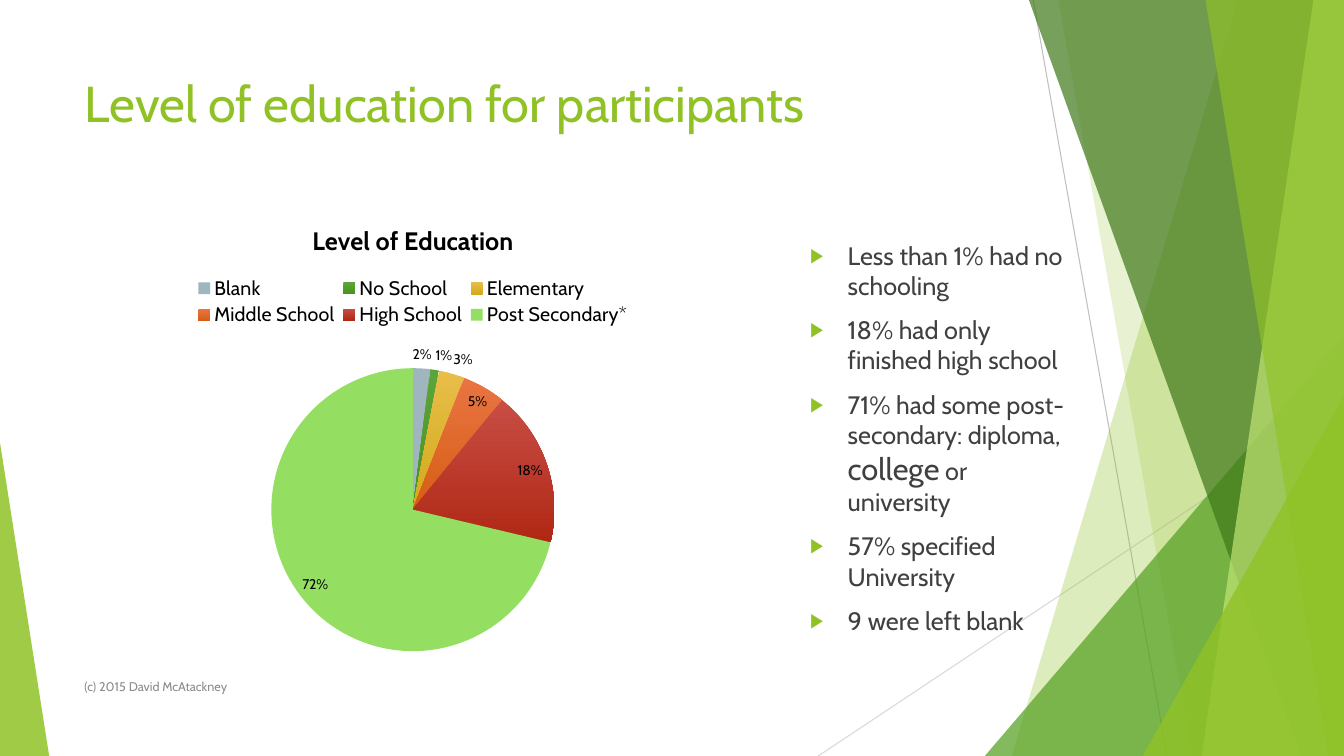
from lxml.etree import SubElement
from pptx import Presentation
from pptx.chart.data import CategoryChartData
from pptx.dml.color import RGBColor
from pptx.enum.chart import XL_CHART_TYPE, XL_LABEL_POSITION, XL_LEGEND_POSITION
from pptx.enum.shapes import MSO_CONNECTOR, MSO_SHAPE
from pptx.enum.text import MSO_ANCHOR, MSO_AUTO_SIZE, PP_ALIGN
from pptx.oxml import parse_xml
from pptx.oxml.ns import nsdecls, qn
from pptx.util import Cm, Pt

WIDTH, HEIGHT = 33.87, 19.05
COLORS = {
    "lime": "90C226", "green": "54A021", "forest": "3F7819", "pale": "C0E474",
    "text": "404040", "footer": "8C8C8C", "black": "000000",
    "line": "BFBFBF", "light line": "D9D9D9",
}
EDUCATION = [
    ("Blank", 2, ["9FB6C0"]),
    ("No School", 1, ["5BA43A", "4B931D"]),
    ("Elementary", 3, ["E8BE4A", "D4A91A"]),
    ("Middle School", 5, ["E97442", "D65E14"]),
    ("High School", 18, ["C84D45", "B02814"]),
    ("Post Secondary*", 72, ["94DE61"]),
]
FINDINGS = [
    [("Less than 1% had no schooling", 18)],
    [("18% had only finished high school", 18)],
    [("71% had some post-secondary: diploma, ", 18), ("college", 22), (" or university", 18)],
    [("57% specified University", 18)],
    [("9 were left blank", 18)],
]


class SlideBuilder:
    font_name = "Cabin"

    def __init__(self, presentation):
        self.slide = presentation.slides.add_slide(presentation.slide_layouts[1])
        self.shapes = self.slide.shapes

    def style_font(self, font, size, color, bold=False):
        font.name = self.font_name
        font.size = Pt(size)
        font.bold = bold
        font.color.rgb = RGBColor.from_string(COLORS[color])

    def place(self, shape, left, top, width, height):
        shape.left, shape.top = Cm(left), Cm(top)
        shape.width, shape.height = Cm(width), Cm(height)

    def line(self, start, end, color):
        points = [Cm(value) for value in (*start, *end)]
        connector = self.shapes.add_connector(MSO_CONNECTOR.STRAIGHT, *points)
        connector.line.width = Pt(0.75)
        connector.line.color.rgb = RGBColor.from_string(COLORS[color])
        SubElement(connector._element.spPr, qn("a:effectLst"))

    def tint(self, shape, color, opacity):
        shape.shadow.inherit = False
        shape.line.fill.background()
        shape.fill.solid()
        shape.fill.fore_color.rgb = RGBColor.from_string(COLORS[color])
        color_element = shape._element.spPr.find(qn("a:solidFill"))[0]
        SubElement(color_element, qn("a:alpha"), val=str(opacity * 1000))

    def panel(self, top_x, bottom_x, color, opacity):
        builder = self.shapes.build_freeform(Cm(top_x), 0)
        corners = [(WIDTH, 0), (WIDTH, HEIGHT), (bottom_x, HEIGHT)]
        builder.add_line_segments([(Cm(x), Cm(y)) for x, y in corners], close=True)
        self.tint(builder.convert_to_shape(), color, opacity)

    def triangle(self, left, width, height, apex, color, opacity):
        shape = self.shapes.add_shape(
            MSO_SHAPE.ISOSCELES_TRIANGLE, Cm(left), Cm(HEIGHT - height), Cm(width), Cm(height))
        shape.adjustments[0] = apex
        self.tint(shape, color, opacity)

    def title(self, text):
        shape = self.shapes.title
        self.place(shape, 1.88, 1.7, 23.88, 3.66)
        shape.text_frame.text = text
        shape.text_frame.auto_size = MSO_AUTO_SIZE.NONE
        shape.text_frame.vertical_anchor = MSO_ANCHOR.TOP
        paragraph = shape.text_frame.paragraphs[0]
        paragraph.alignment = PP_ALIGN.LEFT
        self.style_font(paragraph.runs[0].font, 36, "lime")
        self.bring_forward(shape)

    def bullets(self, items):
        shape = self.slide.placeholders[1]
        self.place(shape, 20.16, 5.92, 7.09, 9.73)
        frame = shape.text_frame
        frame.auto_size = MSO_AUTO_SIZE.NONE
        frame.vertical_anchor = MSO_ANCHOR.TOP
        for index, pieces in enumerate(items):
            paragraph = frame.add_paragraph() if index else frame.paragraphs[0]
            paragraph.space_before = Pt(10)
            for text, size in pieces:
                run = paragraph.add_run()
                run.text = text
                self.style_font(run.font, size, "text")
            self.arrow_bullet(paragraph)
        self.bring_forward(shape)

    def arrow_bullet(self, paragraph):
        properties = paragraph._p.get_or_add_pPr()
        properties.set("marL", str(Cm(0.95)))
        properties.set("indent", str(-Cm(0.95)))
        bullet_color = SubElement(properties, qn("a:buClr"))
        SubElement(bullet_color, qn("a:srgbClr"), val=COLORS["lime"])
        SubElement(properties, qn("a:buSzPct"), val="80000")
        SubElement(properties, qn("a:buChar"), char="▶")

    def bring_forward(self, shape):
        self.shapes._spTree.append(shape._element)

    def footer(self, text):
        shape = self.shapes.add_textbox(Cm(1.88), Cm(16.79), Cm(17.5), Cm(1.02))
        shape.text_frame.word_wrap = True
        shape.text_frame.vertical_anchor = MSO_ANCHOR.MIDDLE
        shape.text_frame.text = text
        self.style_font(shape.text_frame.paragraphs[0].runs[0].font, 9, "footer")

    def pie(self, title, rows):
        data = CategoryChartData()
        data.categories = [name for name, _, _ in rows]
        data.add_series("Series 1", [value for _, value, _ in rows])
        chart = self.shapes.add_chart(
            XL_CHART_TYPE.PIE, Cm(1.02), Cm(5.15), Cm(18.77), Cm(11.66), data).chart
        self.style_font(chart.font, 10, "black")
        chart.has_title = True
        chart.chart_title.text_frame.text = title
        title_run = chart.chart_title.text_frame.paragraphs[0].runs[0]
        self.style_font(title_run.font, 18, "black", bold=True)
        chart.has_legend = True
        chart.legend.position = XL_LEGEND_POSITION.TOP
        chart.legend.include_in_layout = False
        self.style_font(chart.legend.font, 14, "black")
        plot = chart.plots[0]
        plot.vary_by_categories = True
        for index, (_, _, stops) in enumerate(rows):
            self.fill_slice(plot.series[0].points[index].format.fill, stops)
        plot.has_data_labels = True
        labels = plot.data_labels
        labels.show_percentage = False
        labels.show_value = True
        labels.number_format = '0"%"'
        labels.number_format_is_linked = False
        labels.position = XL_LABEL_POSITION.BEST_FIT
        self.style_font(labels.font, 10, "black")
        plot_area = chart._chartSpace.chart.plotArea
        self.chart_layout(plot_area, 0, (0.31, 0.35, 0.38, 0.62), inner=True)
        self.chart_layout(chart.legend._element, 1, (0.2, 0.15, 0.6, 0.12))

    def fill_slice(self, fill, stops):
        if len(stops) == 1:
            fill.solid()
            fill.fore_color.rgb = RGBColor.from_string(stops[0])
            return
        fill.gradient()
        fill.gradient_angle = 270
        for stop, color in zip(fill.gradient_stops, stops):
            stop.color.rgb = RGBColor.from_string(color)

    def chart_layout(self, element, index, box, inner=False):
        for existing in element.findall(qn("c:layout")):
            element.remove(existing)
        target = '<c:layoutTarget val="inner"/>' if inner else ""
        modes = "".join(f'<c:{axis}Mode val="edge"/>' for axis in "xy")
        sizes = "".join(f'<c:{side} val="{value}"/>' for side, value in zip("xywh", box))
        element.insert(index, parse_xml(
            f'<c:layout {nsdecls("c")}><c:manualLayout>{target}{modes}{sizes}'
            "</c:manualLayout></c:layout>"))


def main():
    presentation = Presentation()
    presentation.slide_width, presentation.slide_height = Cm(WIDTH), Cm(HEIGHT)
    builder = SlideBuilder(presentation)
    builder.line((26.04, 0), (29.41, HEIGHT), "line")
    builder.line((WIDTH, 10.24), (20.62, HEIGHT), "light line")
    builder.panel(31.19, 25.5, "lime", 30)
    builder.panel(26.67, 30.05, "lime", 20)
    builder.triangle(24.82, 9.05, 10.59, 1, "green", 72)
    builder.panel(25.93, 32.79, "forest", 70)
    builder.panel(33.1, 30.28, "pale", 70)
    builder.panel(30.38, 33.48, "lime", 65)
    builder.triangle(28.8, 5.07, 9.07, 1, "lime", 80)
    builder.triangle(0, 1.24, 7.9, 0, "lime", 85)
    builder.title("Level of education for participants")
    builder.bullets(FINDINGS)
    builder.footer("(c) 2015 David McAtackney")
    builder.pie("Level of Education", EDUCATION)
    presentation.save("out.pptx")


if __name__ == "__main__":
    main()
